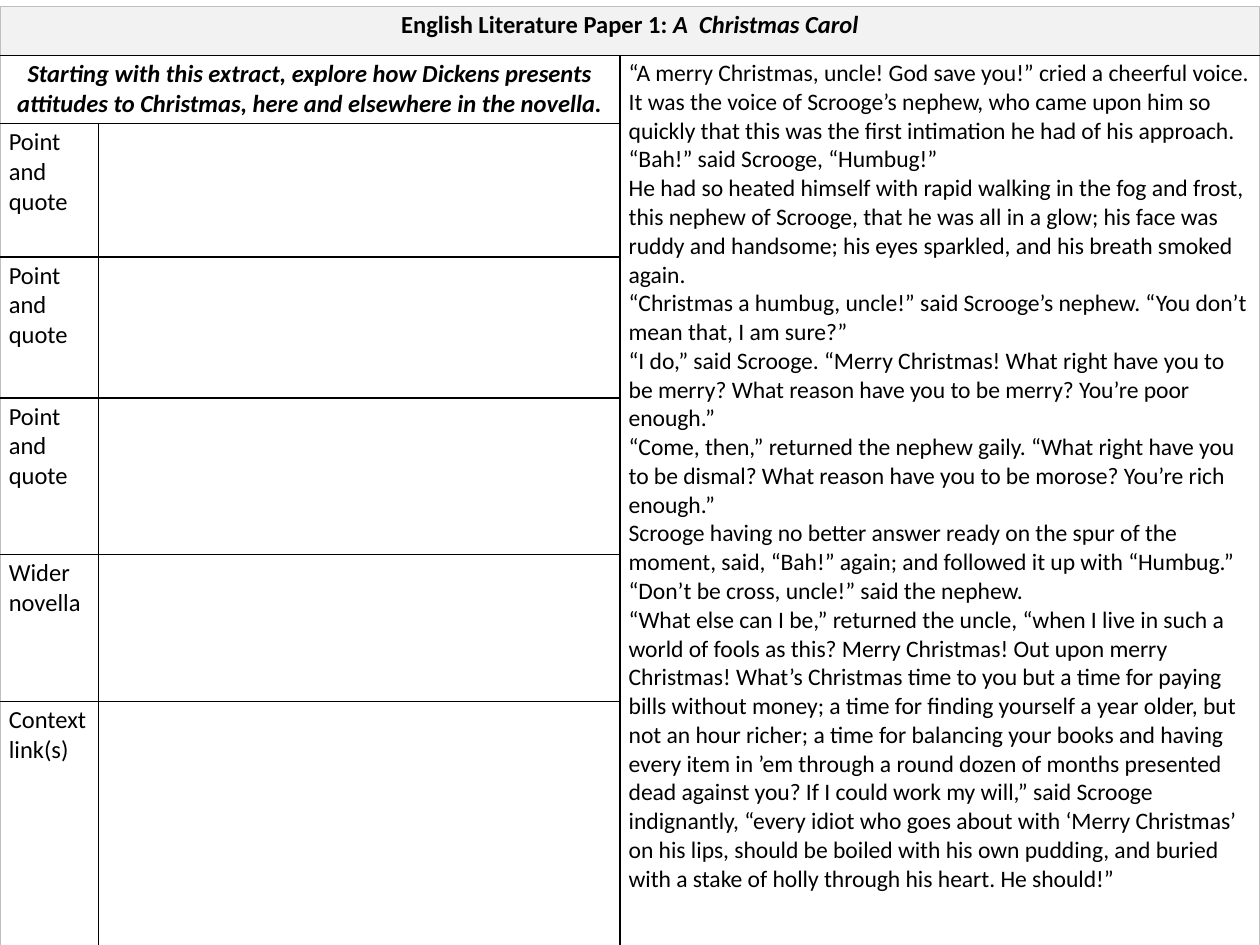
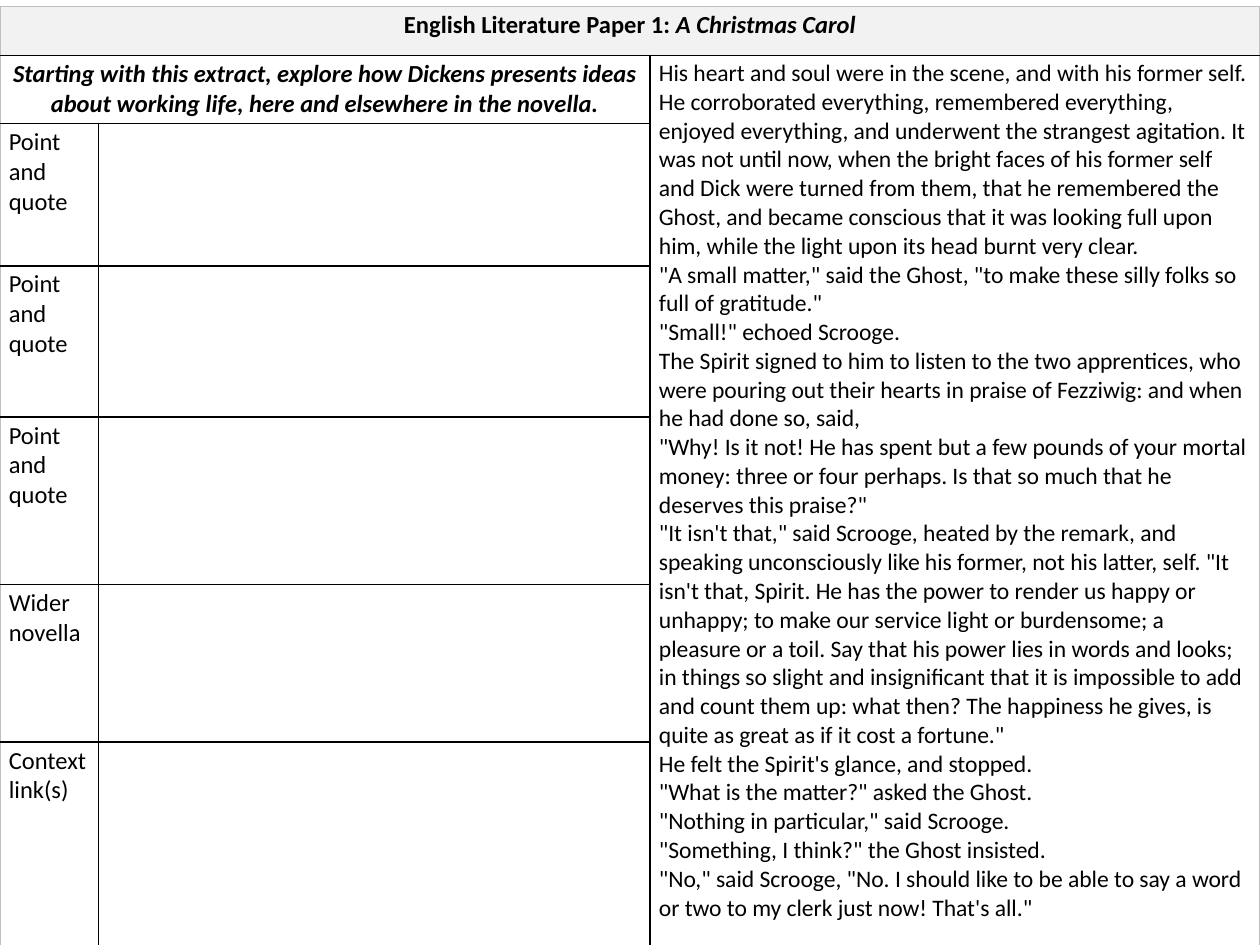
import pptx
import pptx.util
import pptx.dml.color
import pptx.enum.text
import pptx.oxml
import pptx.oxml.ns

Inches = pptx.util.Inches
Pt = pptx.util.Pt
Rgb = pptx.dml.color.RGBColor.from_string
Align = pptx.enum.text.PP_ALIGN

theme = {
    "ink": "000000",
    "edge": "BFBFBF",
    "band": "F2F2F2",
    "line": 1,
    "label": {"name": "Calibri", "size": Pt(14), "bold": False, "italic": False},
    "head": {"name": "Calibri", "size": Pt(14), "bold": True, "italic": False},
    "task": {"name": "Calibri", "size": Pt(14), "bold": True, "italic": True},
    "prose": {"name": "Calibri", "size": Pt(13.5), "bold": False, "italic": False},
    "inset": {
        "margin_left": Inches(0.07),
        "margin_right": Inches(0.07),
        "margin_top": Inches(0.03),
        "margin_bottom": Inches(0.03),
    },
}

labels = ["Point and quote"] * 3 + ["Wider novella", "Context link(s)"]

sheets = [
    {
        "novel": "A  Christmas Carol",
        "task": "Starting with this extract, explore how Dickens presents attitudes to Christmas, here and elsewhere in the novella.",
        "cols": [0.78, 4.14, 5.08],
        "rows": [0.39, 0.54, 1.06, 1.12, 1.24, 1.17, 2.04],
        "prose": [
            "“A merry Christmas, uncle! God save you!” cried a cheerful voice. It was the voice of Scrooge’s nephew, who came upon him so quickly that this was the first intimation he had of his approach.",
            "“Bah!” said Scrooge, “Humbug!”",
            "He had so heated himself with rapid walking in the fog and frost, this nephew of Scrooge, that he was all in a glow; his face was ruddy and handsome; his eyes sparkled, and his breath smoked again.",
            "“Christmas a humbug, uncle!” said Scrooge’s nephew. “You don’t mean that, I am sure?”",
            "“I do,” said Scrooge. “Merry Christmas! What right have you to be merry? What reason have you to be merry? You’re poor enough.”",
            "“Come, then,” returned the nephew gaily. “What right have you to be dismal? What reason have you to be morose? You’re rich enough.”",
            "Scrooge having no better answer ready on the spur of the moment, said, “Bah!” again; and followed it up with “Humbug.”",
            "“Don’t be cross, uncle!” said the nephew.",
            "“What else can I be,” returned the uncle, “when I live in such a world of fools as this? Merry Christmas! Out upon merry Christmas! What’s Christmas time to you but a time for paying bills without money; a time for finding yourself a year older, but not an hour richer; a time for balancing your books and having every item in ’em through a round dozen of months presented dead against you? If I could work my will,” said Scrooge indignantly, “every idiot who goes about with ‘Merry Christmas’ on his lips, should be boiled with his own pudding, and buried with a stake of holly through his heart. He should!”",
        ],
    },
    {
        "novel": "A Christmas Carol",
        "task": "Starting with this extract, explore how Dickens presents ideas about working life, here and elsewhere in the novella.",
        "cols": [0.78, 4.38, 4.84],
        "rows": [0.39, 0.54, 1.13, 1.2, 1.33, 1.25, 1.66],
        "prose": [
            "His heart and soul were in the scene, and with his former self. He corroborated everything, remembered everything, enjoyed everything, and underwent the strangest agitation. It was not until now, when the bright faces of his former self and Dick were turned from them, that he remembered the Ghost, and became conscious that it was looking full upon him, while the light upon its head burnt very clear.",
            '"A small matter," said the Ghost, "to make these silly folks so full of gratitude."',
            '"Small!" echoed Scrooge.',
            "The Spirit signed to him to listen to the two apprentices, who were pouring out their hearts in praise of Fezziwig: and when he had done so, said,",
            '"Why! Is it not! He has spent but a few pounds of your mortal money: three or four perhaps. Is that so much that he deserves this praise?"',
            '"It isn\'t that," said Scrooge, heated by the remark, and speaking unconsciously like his former, not his latter, self. "It isn\'t that, Spirit. He has the power to render us happy or unhappy; to make our service light or burdensome; a pleasure or a toil. Say that his power lies in words and looks; in things so slight and insignificant that it is impossible to add and count them up: what then? The happiness he gives, is quite as great as if it cost a fortune."',
            "He felt the Spirit's glance, and stopped.",
            '"What is the matter?" asked the Ghost.',
            '"Nothing in particular," said Scrooge.',
            '"Something, I think?" the Ghost insisted.',
            '"No," said Scrooge, "No. I should like to be able to say a word or two to my clerk just now! That\'s all."',
        ],
    },
]


def write(cell, paras, align=Align.LEFT):
    frame = cell.text_frame
    for i, parts in enumerate(paras):
        para = frame.add_paragraph() if i else frame.paragraphs[0]
        para.alignment = align
        for text, style in parts:
            run = para.add_run()
            run.text = text
            run.font.color.rgb = Rgb(theme["ink"])
            for key, value in theme[style].items():
                setattr(run.font, key, value)


def rule(cell, sides):
    props = cell._tc.get_or_add_tcPr()
    for i, (side, color) in enumerate(sides.items()):
        props.insert(i, pptx.oxml.parse_xml(
            f'<a:ln{side} {pptx.oxml.ns.nsdecls("a")} w="{Pt(theme["line"])}">'
            f'<a:solidFill><a:srgbClr val="{color}"/></a:solidFill></a:ln{side}>'
        ))


deck = pptx.Presentation()
deck.slide_width = Inches(10)
deck.slide_height = Inches(7.5)

for sheet in sheets:
    slide = deck.slides.add_slide(deck.slide_layouts[6])
    cols, rows = sheet["cols"], sheet["rows"]
    grid = slide.shapes.add_table(
        len(rows), len(cols), 0, Inches(0.05), Inches(10), Inches(sum(rows))
    ).table
    grid.first_row = False
    grid.horz_banding = False
    for col, width in zip(grid.columns, cols):
        col.width = Inches(width)
    for row, height in zip(grid.rows, rows):
        row.height = Inches(height)

    for r in range(len(rows)):
        for c in range(len(cols)):
            cell = grid.cell(r, c)
            for key, value in theme["inset"].items():
                setattr(cell, key, value)
            if r == 0:
                cell.fill.solid()
                cell.fill.fore_color.rgb = Rgb(theme["band"])
            else:
                cell.fill.background()
            outer = {"L": c == 0, "R": r == 0 or c == 2, "T": r == 0, "B": False}
            rule(cell, {s: theme["edge" if out else "ink"] for s, out in outer.items()})

    grid.cell(0, 0).merge(grid.cell(0, 2))
    grid.cell(1, 0).merge(grid.cell(1, 1))
    grid.cell(1, 2).merge(grid.cell(len(rows) - 1, 2))

    title = [("English Literature Paper 1: ", "head"), (sheet["novel"], "task")]
    write(grid.cell(0, 0), [title], Align.CENTER)
    write(grid.cell(1, 0), [[(sheet["task"], "task")]], Align.CENTER)
    write(grid.cell(1, 2), [[(text, "prose")] for text in sheet["prose"]])
    for r, label in enumerate(labels, 2):
        write(grid.cell(r, 0), [[(label, "label")]])

deck.save("out.pptx")
